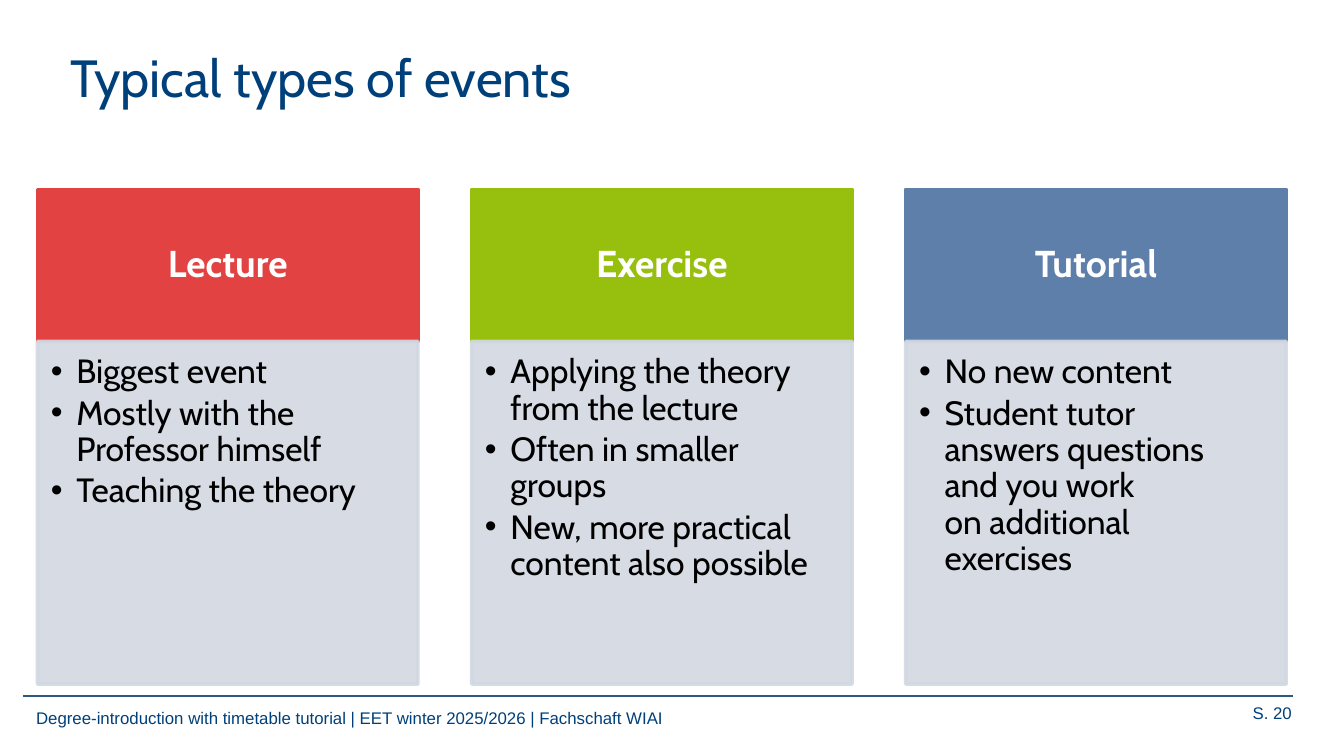
from lxml import etree
from pptx import Presentation
from pptx import util as u
from pptx.dml.color import RGBColor
from pptx.enum import shapes, text
from pptx.oxml.ns import qn

WIDTH = u.Inches(10)
HEIGHT = WIDTH * 9 // 16
COLUMN_LEFT, COLUMN_STEP, COLUMN_WIDTH = 0.28, 3.23, 2.83
HEADER_TOP, HEADER_HEIGHT, BODY_HEIGHT = 1.41, 1.13, 2.55
COLORS = {
    "navy": "00407A", "rule": "2C5884", "white": "FFFFFF", "black": "000000",
    "red": "E24242", "green": "97BF0D", "blue": "5D7FAA", "panel": "D2D8E2",
}
EVENTS = [
    ("Lecture", "red", [
        "Biggest event",
        "Mostly with the Professor himself",
        "Teaching the theory",
    ]),
    ("Exercise", "green", [
        "Applying the theory from the lecture",
        "Often in smaller groups",
        "New, more practical content also possible",
    ]),
    ("Tutorial", "blue", [
        "No new content",
        "Student tutor \vanswers questions \vand you work \von additional \vexercises",
    ]),
]


def rgb(name):
    """Return the named colour."""
    return RGBColor.from_string(COLORS[name])


def style(paragraph, size, color, family="Cabin", bold=False):
    """Set the font of a whole paragraph."""
    font = paragraph.font
    font.size, font.name, font.bold = u.Pt(size), family, bold
    font.color.rgb = rgb(color)


def add_label(slide, box, wording, size, family, align=text.PP_ALIGN.LEFT):
    """Add a navy line of text without a background."""
    frame = slide.shapes.add_textbox(*map(u.Inches, box)).text_frame
    frame.word_wrap = True
    paragraph = frame.paragraphs[0]
    paragraph.text, paragraph.alignment = wording, align
    style(paragraph, size, "navy", family)


def add_rule(slide, left, right, top):
    """Add the thin line above the footer."""
    rule = slide.shapes.add_connector(
        shapes.MSO_CONNECTOR.STRAIGHT, *map(u.Inches, (left, top, right, top)))
    rule.line.color.rgb, rule.line.width = rgb("rule"), u.Pt(0.75)
    etree.SubElement(rule._element.spPr, qn("a:effectLst"))


def add_panel(slide, box, color, insets, anchor):
    """Add a filled rectangle and return it."""
    panel = slide.shapes.add_shape(shapes.MSO_SHAPE.RECTANGLE, *map(u.Inches, box))
    panel.shadow.inherit = False
    panel.fill.solid()
    panel.fill.fore_color.rgb = panel.line.color.rgb = rgb(color)
    panel.line.width = u.Pt(2)
    frame = panel.text_frame
    frame.word_wrap, frame.vertical_anchor = True, anchor
    (frame.margin_left, frame.margin_top,
     frame.margin_right, frame.margin_bottom) = map(u.Inches, insets)
    return panel


def add_header(slide, left, name, color):
    """Add the coloured heading of a column."""
    panel = add_panel(slide, (left, HEADER_TOP, COLUMN_WIDTH, HEADER_HEIGHT), color,
                      (0.16, 0.09, 0.16, 0.09), text.MSO_ANCHOR.MIDDLE)
    heading = panel.text_frame.paragraphs[0]
    heading.text, heading.alignment = name, text.PP_ALIGN.CENTER
    heading.line_spacing = 0.9
    style(heading, 20, "white", bold=True)


def add_bullets(slide, left, points):
    """Add the translucent bullet panel of a column."""
    panel = add_panel(slide, (left, HEADER_TOP + HEADER_HEIGHT, COLUMN_WIDTH, BODY_HEIGHT),
                      "panel", (0.1, 0.1, 0.14, 0.16), text.MSO_ANCHOR.TOP)
    for tint in panel._element.spPr.iter(qn("a:srgbClr")):
        etree.SubElement(tint, qn("a:alpha"), val="90000")
    frame = panel.text_frame
    for index, point in enumerate(points):
        item = frame.add_paragraph() if index else frame.paragraphs[0]
        item.text, item.alignment, item.level = point, text.PP_ALIGN.LEFT, 1
        item.line_spacing, item.space_after = 0.9, u.Pt(2.7)
        properties = item._p.get_or_add_pPr()
        properties.set("marL", str(u.Inches(0.19)))
        properties.set("indent", str(u.Inches(-0.19)))
        etree.SubElement(properties, qn("a:buFont"), typeface="Arial")
        etree.SubElement(properties, qn("a:buChar"), char="•")
        style(item, 18, "black")


def main():
    """Build the slide and save it."""
    deck = Presentation()
    deck.slide_width, deck.slide_height = WIDTH, HEIGHT
    slide = deck.slides.add_slide(deck.slide_layouts[6])
    add_label(slide, (0.17, 5.22, 7.35, 0.19),
              "Degree-introduction with timetable tutorial | EET winter 2025/2026"
              " | Fachschaft WIAI", 9, "Arial")
    add_rule(slide, 0.17, 9.62, 5.18)
    add_label(slide, (8.54, 5.18, 1.17, 0.25), "S. 20", 9, "Arial", text.PP_ALIGN.RIGHT)
    add_label(slide, (0.43, 0.29, 8.03, 0.94), "Typical types of events\v", 28, "Cabin")
    for column, (name, color, points) in enumerate(EVENTS):
        left = COLUMN_LEFT + column * COLUMN_STEP
        add_header(slide, left, name, color)
        add_bullets(slide, left, points)
    deck.save("out.pptx")


if __name__ == "__main__":
    main()
